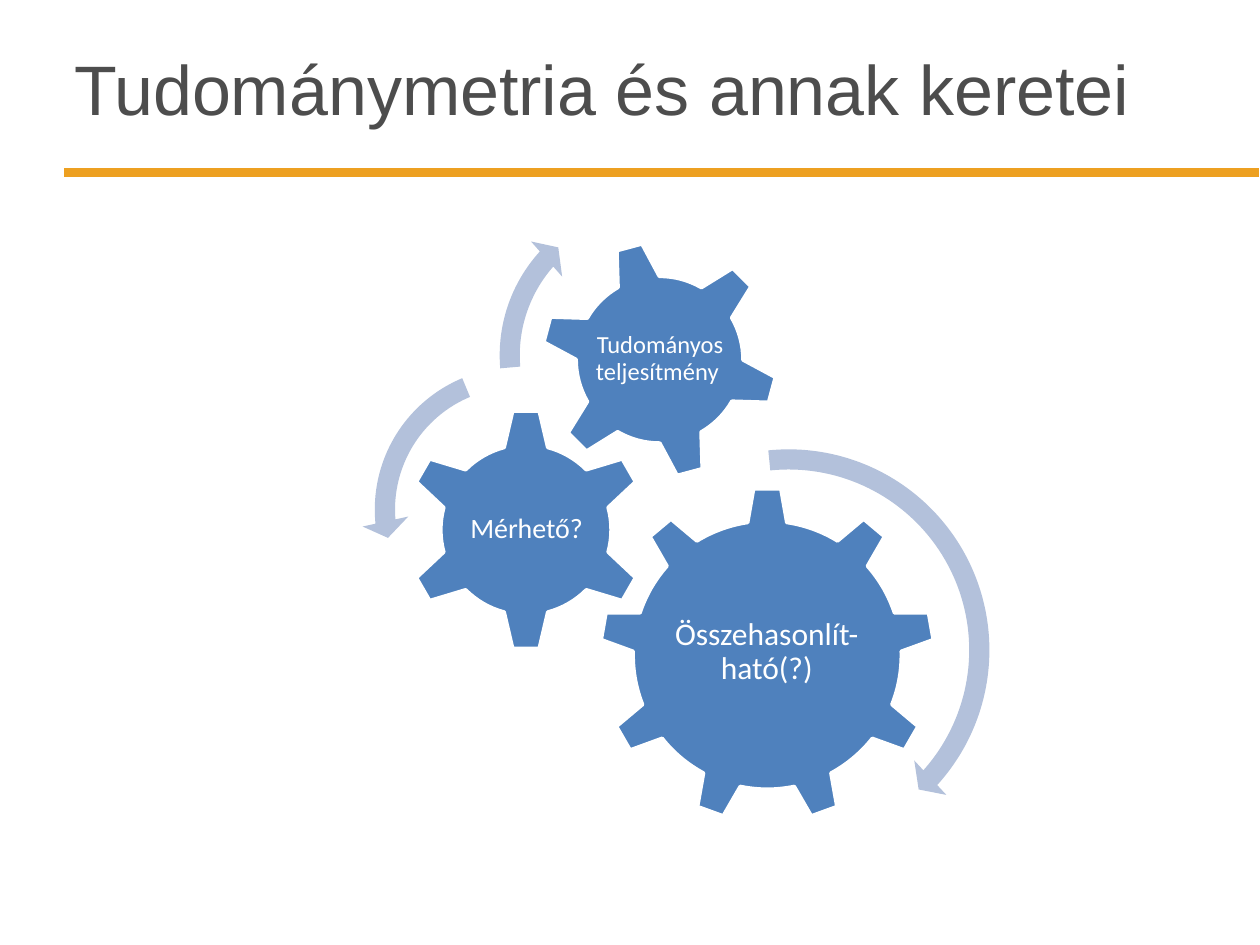
from typing import NamedTuple

from pptx import Presentation
from pptx import util as u
from pptx.dml.color import RGBColor
from pptx.enum import shapes, text

ORANGE = RGBColor(0xED, 0xA0, 0x21)
BLUE = RGBColor(0x4F, 0x81, 0xBD)
PALE_BLUE = RGBColor(0xB3, 0xC1, 0xDB)
GREY = RGBColor(0x4D, 0x4D, 0x4D)
WHITE = RGBColor(0xFF, 0xFF, 0xFF)
SHAPE = shapes.MSO_SHAPE


class Rect(NamedTuple):
    left: float
    top: float
    width: float
    height: float


class Gear(NamedTuple):
    kind: SHAPE
    left: float
    top: float
    size: float
    rotation: float
    label: str
    label_area: Rect
    label_size: int
    inset: float


class Arrow(NamedTuple):
    kind: SHAPE
    left: float
    top: float
    size: float
    adjustments: tuple[float, ...]


GEARS = [
    Gear(SHAPE.GEAR_9, 4.76, 3.87, 2.66, 0, "Összehasonlít-ható(?)",
         Rect(5.29, 4.49, 1.59, 1.37), 18, 0.03),
    Gear(SHAPE.GEAR_6, 3.21, 3.24, 1.93, 0, "Mérhető? ",
         Rect(3.7, 3.73, 0.96, 0.95), 16, 0.02),
    Gear(SHAPE.GEAR_6, 4.29, 1.91, 1.89, 345, "Tudományos teljesítmény ",
         Rect(4.71, 2.32, 1.06, 1.06), 14, 0.02),
]
# Angles are in units of 100000/60000 degrees, as the preset shapes expect.
ARROWS = [
    Arrow(SHAPE.CIRCULAR_ARROW, 4.56, 3.46, 3.4, (0.047, 2.99, 25.213, 158.503, 0.055)),
    Arrow(SHAPE.LEFT_CIRCULAR_ARROW, 2.87, 2.81, 2.47, (0.065, 4.3, 104.891, 148.378, 0.075)),
    Arrow(SHAPE.CIRCULAR_ARROW, 3.86, 1.49, 2.66, (0.06, 3.941, 133.138, 105.082, 0.07)),
]


def add_shape(page, kind: SHAPE, area: Rect, fill: RGBColor, line_width: float = 0):
    """Add a flat shape, with a white outline if a line width is given."""
    shape = page.shapes.add_shape(kind, *map(u.Inches, area))
    shape.shadow.inherit = False
    shape.fill.solid()
    shape.fill.fore_color.rgb = fill
    if line_width:
        shape.line.color.rgb = WHITE
        shape.line.width = u.Pt(line_width)
    else:
        shape.line.fill.background()
    return shape


def add_text(page, area: Rect, wording: str, font: str, size: int, color: RGBColor):
    """Add a wrapped, vertically centred text box and return its frame."""
    frame = page.shapes.add_textbox(*map(u.Inches, area)).text_frame
    frame.word_wrap = True
    frame.vertical_anchor = text.MSO_ANCHOR.MIDDLE
    frame.text = wording
    span = frame.paragraphs[0].runs[0]
    span.font.name = font
    span.font.size = u.Pt(size)
    span.font.color.rgb = color
    return frame


def add_gear(page, gear: Gear) -> None:
    area = Rect(gear.left, gear.top, gear.size, gear.size)
    add_shape(page, gear.kind, area, BLUE, 2).rotation = gear.rotation
    frame = add_text(page, gear.label_area, gear.label, "Calibri", gear.label_size, WHITE)
    frame.margin_left = frame.margin_right = u.Inches(gear.inset)
    frame.margin_top = frame.margin_bottom = u.Inches(gear.inset)
    para = frame.paragraphs[0]
    para.alignment = text.PP_ALIGN.CENTER
    para.line_spacing = 0.9


def add_arrow(page, arrow: Arrow) -> None:
    area = Rect(arrow.left, arrow.top, arrow.size, arrow.size)
    shape = add_shape(page, arrow.kind, area, PALE_BLUE)
    for index, value in enumerate(arrow.adjustments):
        shape.adjustments[index] = value


def main() -> None:
    deck = Presentation()
    deck.slide_width = u.Inches(10)
    deck.slide_height = u.Inches(7.5)
    page = deck.slides.add_slide(deck.slide_layouts[6])
    add_shape(page, SHAPE.RECTANGLE, Rect(0.5, 1.33, 9.5, 0.08), ORANGE, 0.75)
    add_text(page, Rect(0.49, 0.22, 9.23, 0.95),
             "Tudománymetria és annak keretei", "Arial", 40, GREY)
    for gear in GEARS:
        add_gear(page, gear)
    for arrow in ARROWS:
        add_arrow(page, arrow)
    deck.save("out.pptx")


if __name__ == "__main__":
    main()
